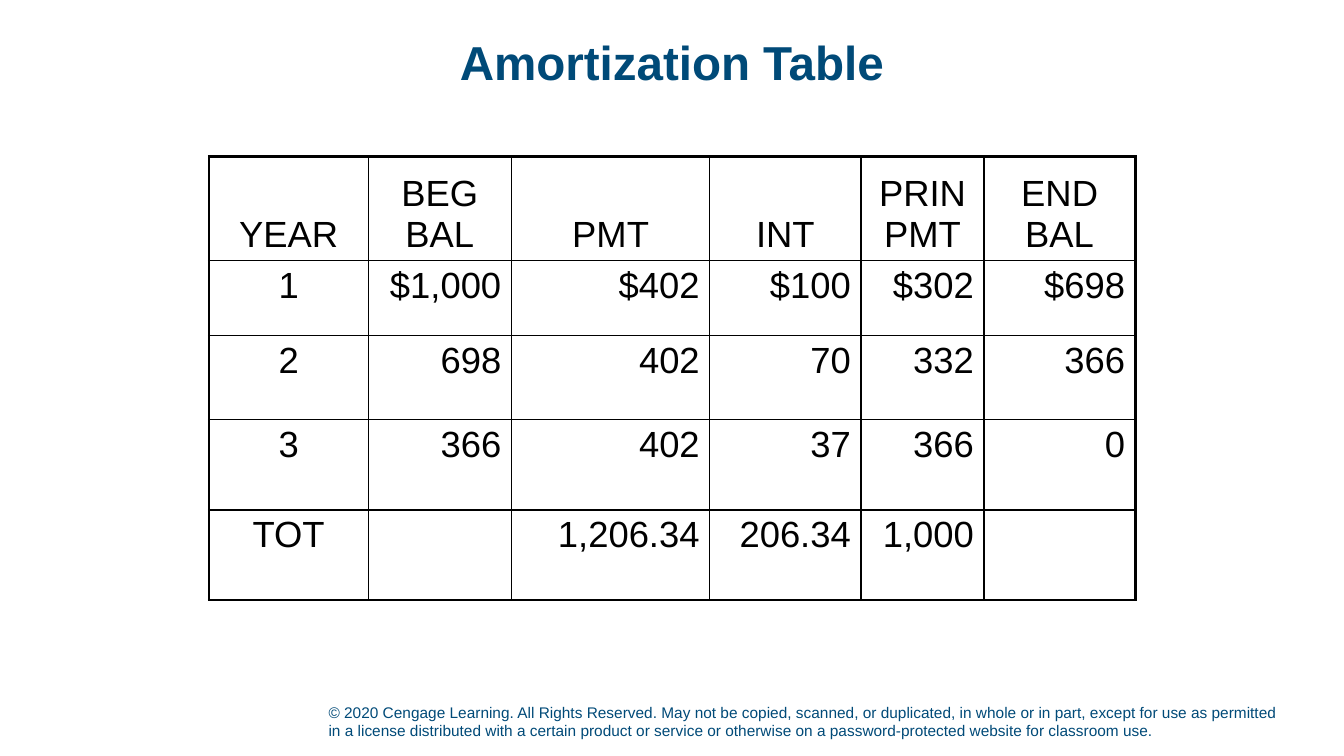
import pptx
import pptx.dml.color
import pptx.enum.text
import pptx.oxml
import pptx.oxml.ns
import pptx.util

Cm = pptx.util.Cm
Pt = pptx.util.Pt
ALIGN = pptx.enum.text.PP_ALIGN
ANCHOR = pptx.enum.text.MSO_ANCHOR

NAVY = pptx.dml.color.RGBColor(0x00, 0x4A, 0x78)
BLACK = pptx.dml.color.RGBColor(0x00, 0x00, 0x00)

FONT = "Arial"
OUTER, INNER = 2.25, 1

COL_WIDTHS = [4.01, 3.61, 5, 3.81, 3.1, 3.81]
ROW_HEIGHTS = [2.62, 1.9, 2.12, 2.27, 2.27]
ROWS = [
    ["YEAR", "BEG BAL", "PMT", "INT", "PRIN PMT", "END BAL"],
    ["1", "$1,000", "$402", "$100", "$302", "$698"],
    ["2", "698", "402", "70", "332", "366"],
    ["3", "366", "402", "37", "366", "0"],
    ["TOT", "", "1,206.34", "206.34", "1,000", ""],
]
COPYRIGHT = (
    "© 2020 Cengage Learning. All Rights Reserved. May not be copied, scanned, "
    "or duplicated, in whole or in part, except for use as permitted in a license "
    "distributed with a certain product or service or otherwise on a "
    "password-protected website for classroom use."
)


def write_text(tf, text, size=26, color=BLACK, bold=False, align=ALIGN.LEFT,
               line_spacing=None):
    p = tf.paragraphs[0]
    p.alignment = align
    p.line_spacing = line_spacing
    r = p.add_run()
    r.text = text
    r.font.name = FONT
    r.font.size = Pt(size)
    r.font.bold = bold
    r.font.color.rgb = color


def add_text_box(s, left, top, width, height, text, anchor, **text_format):
    sp = s.shapes.add_textbox(Cm(left), Cm(top), Cm(width), Cm(height))
    tf = sp.text_frame
    tf.word_wrap = True
    tf.vertical_anchor = anchor
    write_text(tf, text, **text_format)


def set_borders(cell, widths):
    """Draw black borders; widths maps L, R, T and B to points."""
    tc_pr = cell._tc.get_or_add_tcPr()
    for side, width in widths.items():
        tc_pr.append(pptx.oxml.parse_xml(
            f'<a:ln{side} {pptx.oxml.ns.nsdecls("a")} w="{Pt(width)}">'
            f'<a:solidFill><a:srgbClr val="{BLACK}"/></a:solidFill></a:ln{side}>'))


def add_amortization_table(s, left, top):
    frame = s.shapes.add_table(len(ROWS), len(COL_WIDTHS), Cm(left), Cm(top),
                               Cm(sum(COL_WIDTHS)), Cm(sum(ROW_HEIGHTS)))
    table = frame.table
    table.first_row = False
    table.horz_banding = False
    for column, width in zip(table.columns, COL_WIDTHS):
        column.width = Cm(width)
    for row, height in zip(table.rows, ROW_HEIGHTS):
        row.height = Cm(height)

    last_row, last_col = len(ROWS) - 1, len(COL_WIDTHS) - 1
    for i, values in enumerate(ROWS):
        for j, value in enumerate(values):
            cell = table.cell(i, j)
            # Thick outer frame, thin inner grid
            set_borders(cell, {
                "L": OUTER if j == 0 else INNER,
                "R": OUTER if j == last_col else INNER,
                "T": OUTER if i == 0 else INNER,
                "B": OUTER if i == last_row else INNER,
            })
            cell.fill.background()
            cell.vertical_anchor = ANCHOR.BOTTOM if i == 0 else ANCHOR.TOP
            if value:
                centred = i == 0 or j == 0
                write_text(cell.text_frame, value,
                           align=ALIGN.CENTER if centred else ALIGN.RIGHT)


def main():
    prs = pptx.Presentation()
    prs.slide_width, prs.slide_height = Cm(33.87), Cm(19.05)
    s = prs.slides.add_slide(prs.slide_layouts[6])

    # Copyright line
    add_text_box(s, 8.03, 17.5, 24.46, 1.27, COPYRIGHT, ANCHOR.BOTTOM,
                 size=11, color=NAVY)
    # Title
    add_text_box(s, 2.33, 0.38, 29.21, 2.54, "Amortization Table", ANCHOR.MIDDLE,
                 size=34, color=NAVY, bold=True, align=ALIGN.CENTER,
                 line_spacing=0.9)
    # Loan schedule
    add_amortization_table(s, 5.27, 3.94)

    prs.save("out.pptx")


if __name__ == "__main__":
    main()
